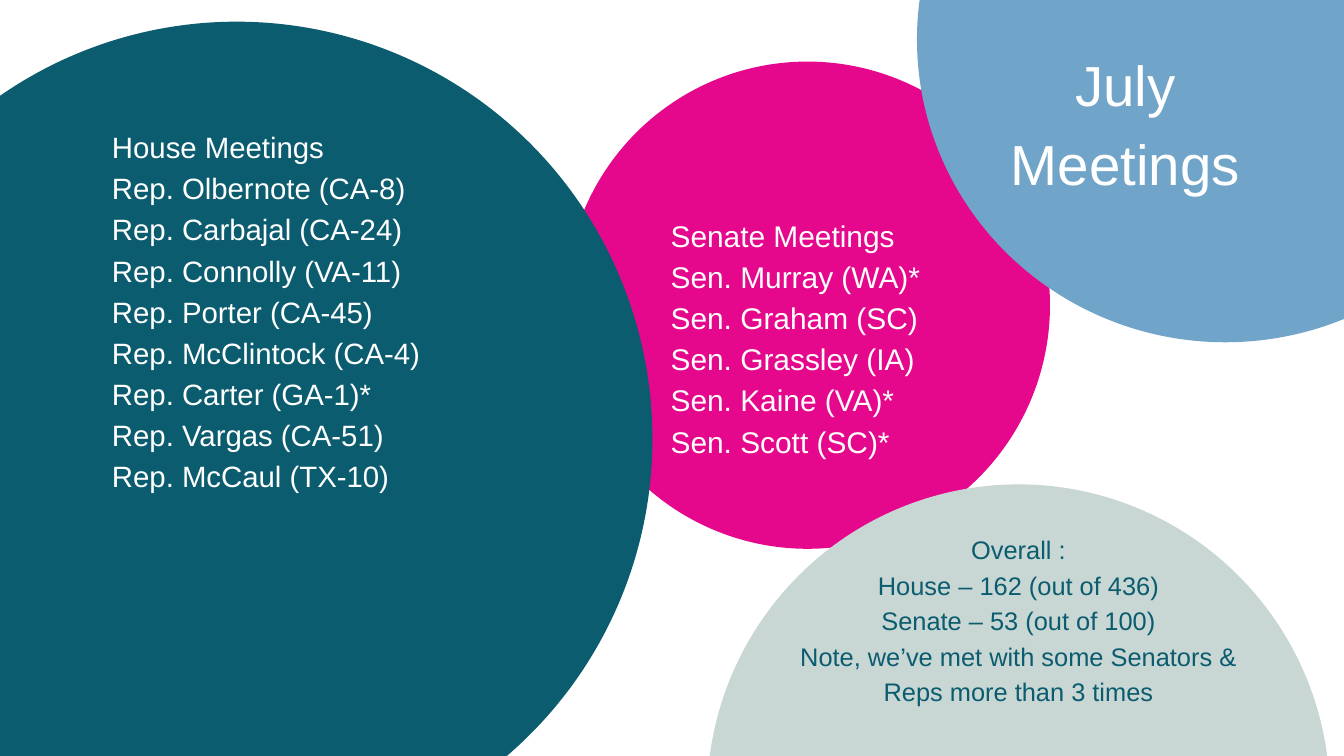
from pptx import Presentation
from pptx.dml.color import RGBColor
from pptx.enum.shapes import MSO_SHAPE
from pptx.enum.text import MSO_AUTO_SIZE, PP_ALIGN
from pptx.util import Emu, Pt

EMU_PER_PX = 9525  # 96 px to the inch
FONT = "Arial"
WHITE, TEAL, PINK, GREY, BLUE = "FFFFFF", "0B5C6F", "E5088D", "C8D6D4", "70A4C8"

HOUSE = [
    "House Meetings",
    "Rep. Olbernote (CA-8)",
    "Rep. Carbajal (CA-24)",
    "Rep. Connolly (VA-11)",
    "Rep. Porter (CA-45)",
    "Rep. McClintock (CA-4)",
    "Rep. Carter (GA-1)*",
    "Rep. Vargas (CA-51)",
    "Rep. McCaul (TX-10)",
]
SENATE = [
    "Senate Meetings",
    "Sen. Murray (WA)*",
    "Sen. Graham (SC)",
    "Sen. Grassley (IA)",
    "Sen. Kaine (VA)*",
    "Sen. Scott (SC)*",
]
OVERALL = [
    "Overall :",
    "House – 162 (out of 436)",
    "Senate – 53 (out of 100)",
    "Note, we’ve met with some Senators & Reps more than 3 times",
]


def px(length):
    return Emu(length * EMU_PER_PX)


def color(value):
    return RGBColor.from_string(value)


def add_circle(page, left, top, width, height, fill):
    circle = page.shapes.add_shape(
        MSO_SHAPE.OVAL, px(left), px(top), px(width), px(height))
    circle.shadow.inherit = False
    circle.fill.solid()
    circle.fill.fore_color.rgb = color(fill)
    circle.line.fill.background()


def add_text(page, left, top, width, height, lines, size, spacing, ink,
             align=PP_ALIGN.LEFT, inset=(0, 0)):
    box = page.shapes.add_textbox(px(left), px(top), px(width), px(height))
    frame = box.text_frame
    frame.word_wrap = True
    frame.auto_size = MSO_AUTO_SIZE.SHAPE_TO_FIT_TEXT
    frame.margin_left = frame.margin_right = px(inset[0])
    frame.margin_top = frame.margin_bottom = px(inset[1])
    frame.text = "\n".join(lines)
    for para in frame.paragraphs:
        para.alignment = align
        para.line_spacing = Pt(spacing)
        for span in para.runs:
            span.font.name = FONT
            span.font.size = Pt(size)
            span.font.color.rgb = color(ink)


def main():
    deck = Presentation()
    deck.slide_width, deck.slide_height = px(1920), px(1080)
    page = deck.slides.add_slide(deck.slide_layouts[6])

    # Overlapping circles, back to front
    add_circle(page, 807, 88, 693, 696, PINK)
    add_circle(page, -256, 31, 1188, 1192, TEAL)
    add_circle(page, 1010, 692, 890, 894, GREY)
    add_circle(page, 1310, -376, 881, 865, BLUE)

    # House list, title, totals and Senate list
    add_text(page, 160, 176, 720, 649, HOUSE, 31.5, 44.1, WHITE)
    add_text(page, 1345, 56, 525, 223, ["July", "Meetings"], 60.5, 84.7, WHITE,
             PP_ALIGN.CENTER)
    add_text(page, 1102, 756, 706, 253, OVERALL, 27.2, 38.1, TEAL,
             PP_ALIGN.CENTER)
    add_text(page, 948, 298, 1224, 420, SENATE, 32, 44.1, WHITE, inset=(10, 5))

    deck.save("out.pptx")


if __name__ == "__main__":
    main()
